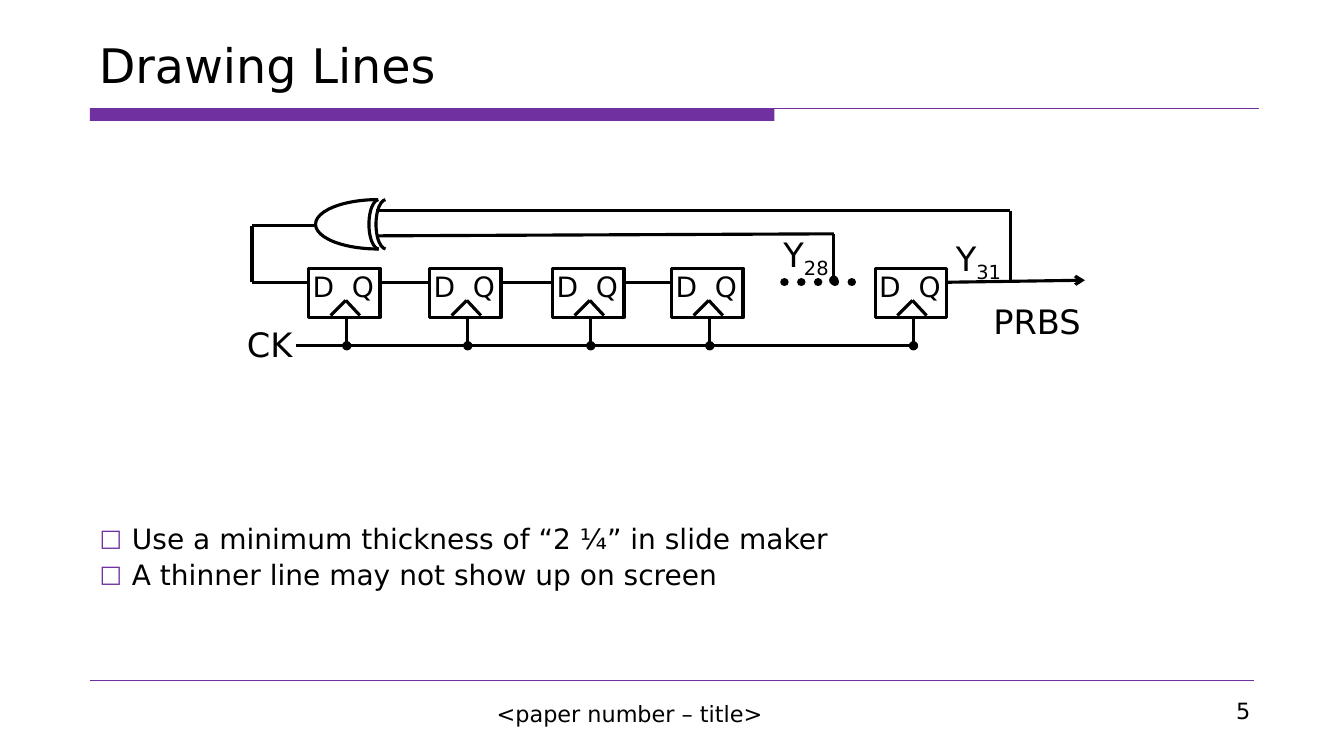
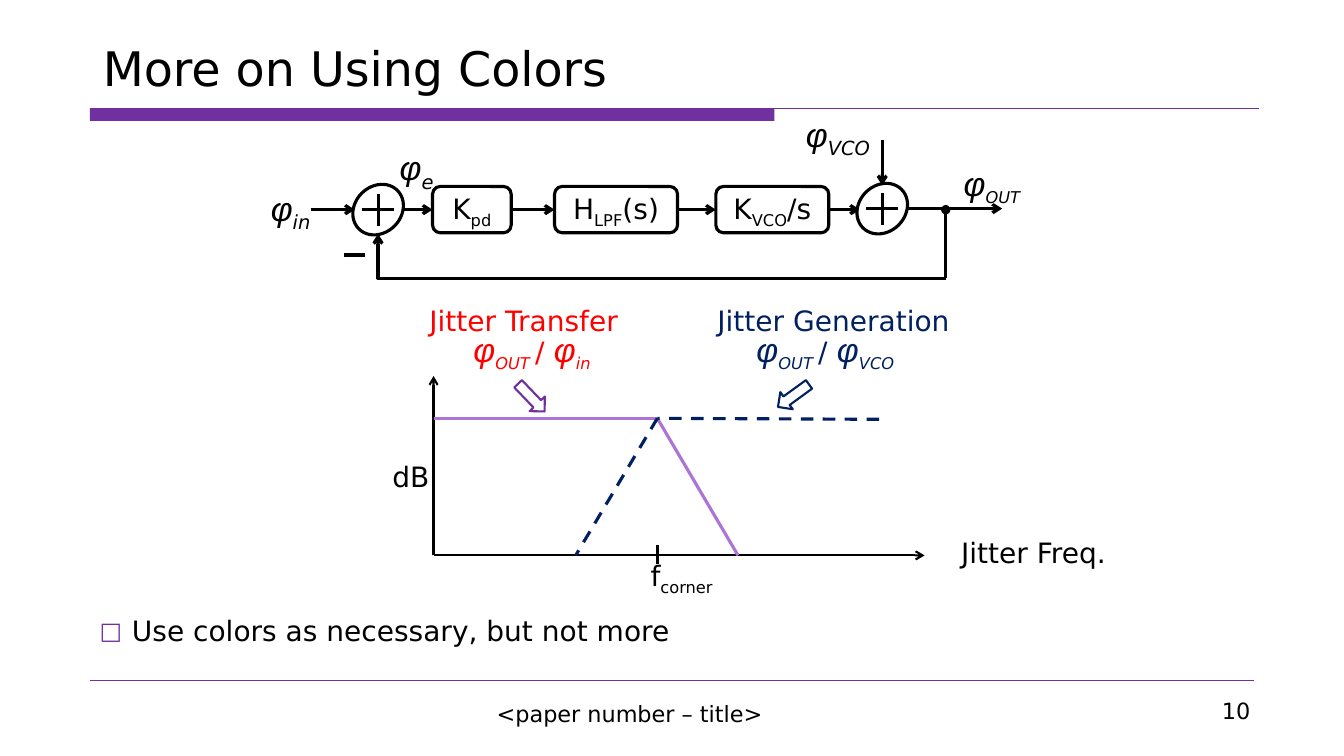
from dataclasses import dataclass
from itertools import pairwise
from typing import NamedTuple, Optional, Sequence

from lxml.etree import SubElement
from pptx import Presentation
from pptx.dml.color import RGBColor
from pptx.enum.dml import MSO_LINE
from pptx.enum.shapes import MSO_CONNECTOR, MSO_SHAPE as Preset
from pptx.enum.text import MSO_ANCHOR, MSO_AUTO_SIZE, PP_ALIGN as Align
from pptx.oxml.ns import qn
from pptx.shapes.autoshape import Shape
from pptx.shapes.connector import Connector
from pptx.slide import Slide
from pptx.text.text import TextFrame
from pptx.util import Inches, Pt


@dataclass(frozen=True)
class Theme:
    black: RGBColor = RGBColor(0, 0, 0)
    white: RGBColor = RGBColor(255, 255, 255)
    purple: RGBColor = RGBColor(0x70, 0x30, 0xA0)
    lilac: RGBColor = RGBColor(0xAB, 0x74, 0xD5)
    navy: RGBColor = RGBColor(0, 0x20, 0x60)
    red: RGBColor = RGBColor(255, 0, 0)
    font: str = "DejaVu Sans"
    symbol_font: str = "Arial"
    title: float = 34
    large: float = 24
    body: float = 20
    footer: float = 16
    stroke: float = 2.25
    thin: float = 1.5


THEME = Theme()
LEFT, TOP, RIGHT, BOTTOM = 1, 0, 1, 2
CONNECT_LEFT, CONNECT_RIGHT = 1, 3


class Point(NamedTuple):
    x: float
    y: float


class Text(NamedTuple):
    text: str
    size: float = THEME.body
    color: RGBColor = THEME.black
    font: str = THEME.font
    italic: bool = False
    subscript: bool = False


class Label(NamedTuple):
    """Right-aligned text, placed by its box's right edge and top."""
    right: float
    top: float
    width: float
    texts: Sequence[Text]


class Line(NamedTuple):
    begin: Point
    end: Point
    color: RGBColor = THEME.black
    width: float = THEME.stroke
    head: str = ""
    tail: str = ""
    dash: Optional[MSO_LINE] = None


class Block(NamedTuple):
    left: float
    width: float
    texts: Sequence[Text]


class PointerArrow(NamedTuple):
    left: float
    top: float
    angle: float
    color: RGBColor


def phi(subscript: str, size: float = THEME.large, color: RGBColor = THEME.black,
        lead: str = "") -> list[Text]:
    return [Text(lead + "φ", THEME.large, color, THEME.symbol_font, True),
            Text(subscript, size, color, italic=True, subscript=True)]


def phi_ratio(denominator: str, color: RGBColor) -> list[Text]:
    return [*phi("OUT ", THEME.body, color), Text("/", color=color),
            *phi(denominator, THEME.body, color, " ")]


def add_texts(paragraph, texts: Sequence[Text]) -> None:
    for text in texts:
        run = paragraph.add_run()
        run.text = text.text
        run.font.name = text.font
        run.font.size = Pt(text.size)
        run.font.italic = text.italic
        run.font.color.rgb = text.color
        if text.subscript:
            run.font._element.set("baseline", "-25000")


def set_frame(frame: TextFrame, insets: tuple[float, float, float, float] = (0.1, 0.05, 0.1, 0.05),
              anchor: MSO_ANCHOR = MSO_ANCHOR.TOP) -> None:
    """Insets run left, top, right, bottom."""
    frame.word_wrap = True
    frame.auto_size = MSO_AUTO_SIZE.NONE
    frame.vertical_anchor = anchor
    (frame.margin_left, frame.margin_top,
     frame.margin_right, frame.margin_bottom) = map(Inches, insets)


def add_box(slide: Slide, left: float, top: float, width: float, height: float) -> TextFrame:
    box = slide.shapes.add_textbox(Inches(left), Inches(top), Inches(width), Inches(height))
    set_frame(box.text_frame)
    return box.text_frame


def add_label(slide: Slide, label: Label) -> None:
    height = 0.44 if label.texts[0].size == THEME.large else 0.38
    frame = add_box(slide, label.right - label.width, label.top, label.width, height)
    set_frame(frame, (0.04, 0, 0.04, 0.04))
    frame.paragraphs[0].alignment = Align.RIGHT
    add_texts(frame.paragraphs[0], label.texts)


def add_bullets(slide: Slide, top: float, height: float, items: Sequence[str]) -> None:
    frame = add_box(slide, 0.89, top, 11.56, height)
    for index, item in enumerate(items):
        paragraph = frame.paragraphs[0] if index == 0 else frame.add_paragraph()
        properties = paragraph._p.get_or_add_pPr()
        properties.set("marL", str(Inches(0.32)))
        properties.set("indent", str(-Inches(0.32)))
        color = SubElement(properties, qn("a:buClr"))
        SubElement(color, qn("a:srgbClr"), val=str(THEME.purple))
        SubElement(properties, qn("a:buSzPct"), val="85000")
        SubElement(properties, qn("a:buFont"), typeface=THEME.font)
        SubElement(properties, qn("a:buChar"), char="□")
        paragraph.line_spacing = 0.9
        if index:
            paragraph.space_before = Pt(4)
        add_texts(paragraph, [Text(item)])


def add_line_ends(shape: Shape | Connector, head: str, tail: str) -> None:
    outline = shape._element.spPr.find(qn("a:ln"))
    for tag, kind in (("a:headEnd", head), ("a:tailEnd", tail)):
        if kind:
            SubElement(outline, qn(tag), type=kind)


def add_line(slide: Slide, line: Line) -> Connector:
    connector = slide.shapes.add_connector(
        MSO_CONNECTOR.STRAIGHT, *map(Inches, (*line.begin, *line.end)))
    connector.line.color.rgb = line.color
    connector.line.width = Pt(line.width)
    if line.dash:
        connector.line.dash_style = line.dash
    if line.dash == MSO_LINE.ROUND_DOT:
        connector._element.spPr.find(qn("a:ln")).set("cap", "rnd")
    add_line_ends(connector, line.head, line.tail)
    SubElement(connector._element.spPr, qn("a:effectLst"))
    return connector


def add_shape(slide: Slide, preset: Preset, left: float, top: float, width: float, height: float,
              fill: Optional[RGBColor] = THEME.white, color: RGBColor = THEME.black,
              line_width: float = THEME.stroke) -> Shape:
    shape = slide.shapes.add_shape(preset, *map(Inches, (left, top, width, height)))
    shape.shadow.inherit = False
    if fill is None:
        shape.fill.background()
    else:
        shape.fill.solid()
        shape.fill.fore_color.rgb = fill
    shape.line.color.rgb = color
    shape.line.width = Pt(line_width)
    return shape


def add_base_slide(presentation, title: str, number: int, left: float, top: float,
                   width: float) -> Slide:
    """Title-only slide with the title band and the footer."""
    slide = presentation.slides.add_slide(presentation.slide_layouts[5])
    band = add_shape(slide, Preset.RECTANGLE, 0.89, 1.08, 6.79, 0.12, THEME.purple)
    band.line.fill.background()
    add_line(slide, Line(Point(0.89, 1.08), Point(12.49, 1.08), THEME.purple, 0.75))
    add_line(slide, Line(Point(0.89, 6.75), Point(12.44, 6.75), THEME.purple, 0.25))
    for text, align, box in ((str(number), Align.RIGHT, (10.93, 6.87, 1.57, 0.37)),
                             ("<paper number – title>", Align.CENTER, (3.17, 6.9, 6.15, 0.37))):
        paragraph = add_box(slide, *box).paragraphs[0]
        paragraph.alignment = align
        add_texts(paragraph, [Text(text, THEME.footer)])
    holder = slide.shapes.title
    holder.left, holder.top, holder.width, holder.height = map(Inches, (left, top, width, 0.6))
    set_frame(holder.text_frame, anchor=MSO_ANCHOR.BOTTOM)
    paragraph = holder.text_frame.paragraphs[0]
    paragraph.alignment = Align.LEFT
    add_texts(paragraph, [Text(title, THEME.title)])
    return slide


def add_flip_flop(slide: Slide, left: float) -> None:
    shape = add_shape(slide, Preset.RECTANGLE, left, 2.66, 0.71, 0.49)
    set_frame(shape.text_frame, (0.04, 0.05, 0, 0))
    paragraph = shape.text_frame.paragraphs[0]
    tabs = SubElement(paragraph._p.get_or_add_pPr(), qn("a:tabLst"))
    SubElement(tabs, qn("a:tab"), pos=str(Inches(0.39)), algn="l")
    paragraph.alignment = Align.LEFT
    paragraph.line_spacing = 0.9
    add_texts(paragraph, [Text("D\tQ")])
    add_line(slide, Line(Point(left + 0.38, 3.43), Point(left + 0.38, 3.14), head="oval"))
    for foot in (0.22, 0.51):
        add_line(slide, Line(Point(left + foot, 3.13), Point(left + 0.37, 2.98)))


def add_xor_gate(slide: Slide) -> None:
    for left, width, start, end in ((3.13, 1.24, 162, 55.05), (3.66, 0.2, 163, 53.29),
                                    (3.73, 0.2, 163, 53.29)):
        arc = add_shape(slide, Preset.ARC, left, 1.98, width, 0.49)
        arc.adjustments[0], arc.adjustments[1] = start, end
        arc._element.spPr.find(qn("a:xfrm")).set("flipH", "1")


def add_adder(slide: Slide, center: Point) -> None:
    x, y = center
    add_shape(slide, Preset.OVAL, x - 0.23, y - 0.27, 0.46, 0.54).rotation = 45
    add_line(slide, Line(Point(x - 0.16, y), Point(x + 0.16, y)))
    add_line(slide, Line(Point(x, y + 0.16), Point(x, y - 0.16)))


def add_block(slide: Slide, block: Block) -> Shape:
    shape = add_shape(slide, Preset.ROUNDED_RECTANGLE, block.left, 1.85, block.width, 0.46)
    set_frame(shape.text_frame, (0, 0, 0, 0), MSO_ANCHOR.MIDDLE)
    paragraph = shape.text_frame.paragraphs[0]
    paragraph.alignment = Align.CENTER
    paragraph.line_spacing = 0.9
    add_texts(paragraph, block.texts)
    return shape


def build_lines_slide(presentation) -> None:
    slide = add_base_slide(presentation, "Drawing Lines", 5, 0.88, 0.37, 4.38)
    add_bullets(slide, 5.16, 0.77, ["Use a minimum thickness of “2 ¼” in slide maker",
                                    "A thinner line may not show up on screen"])
    stages = (3.06, 4.26, 5.48, 6.66)
    last_stage = 8.68
    for left in (*stages, last_stage):
        add_flip_flop(slide, left)
    for left, following in pairwise(stages):
        add_line(slide, Line(Point(left + 0.71, 2.8), Point(following, 2.8)))
    feedback = (Point(3.57, 2.24), Point(2.5, 2.24), Point(2.5, 2.8), Point(3.06, 2.8))
    for begin, end in pairwise(feedback):
        add_line(slide, Line(begin, end))
    add_xor_gate(slide)
    for line in (Line(Point(2.94, 3.43), Point(9.06, 3.43)),
                 Line(Point(10.02, 2.09), Point(3.73, 2.09)),
                 Line(Point(8.27, 2.32), Point(3.73, 2.34)),
                 Line(Point(8.27, 2.78), Point(8.27, 2.32), head="oval"),
                 Line(Point(10.02, 2.09), Point(10.02, 2.8)),
                 Line(Point(9.4, 2.8), Point(10.76, 2.78), tail="arrow"),
                 Line(Point(7.78, 2.8), Point(8.56, 2.8), width=6, dash=MSO_LINE.ROUND_DOT)):
        add_line(slide, line)
    for right, top, width, name, index in ((2.94, 3.21, 0.8, "CK", ""),
                                           (10.76, 2.99, 1.2, "PRBS", ""),
                                           (8.26, 2.32, 0.8, "Y", "28"),
                                           (9.97, 2.36, 0.8, "Y", "31")):
        texts = [Text(name, THEME.large)]
        if index:
            texts.append(Text(index, THEME.large, subscript=True))
        add_label(slide, Label(right, top, width, texts))


def add_loop_diagram(slide: Slide) -> None:
    blocks = [add_block(slide, block) for block in (
        Block(4.29, 0.78, [Text("K"), Text("pd", subscript=True)]),
        Block(5.5, 1.22, [Text("H"), Text("LPF", subscript=True), Text("(s)")]),
        Block(7.1, 1.12, [Text("K"), Text("VCO", subscript=True), Text("/s")]))]
    for source, target in pairwise(blocks):
        arrow = add_line(slide, Line(Point(5, 2.08), Point(6, 2.08), tail="arrow"))
        arrow.begin_connect(source, CONNECT_RIGHT)
        arrow.end_connect(target, CONNECT_LEFT)
    into_first = add_line(slide, Line(Point(3.97, 2.08), Point(4.29, 2.08), tail="arrow"))
    into_first.end_connect(blocks[0], CONNECT_LEFT)
    from_last = add_line(slide, Line(Point(8.22, 2.08), Point(8.53, 2.08), tail="arrow"))
    from_last.begin_connect(blocks[-1], CONNECT_RIGHT)
    for line in (Line(Point(3.08, 2.08), Point(3.52, 2.08), tail="arrow"),
                 Line(Point(8.98, 2.07), Point(9.94, 2.07), tail="arrow"),
                 Line(Point(9.38, 2.76), Point(9.38, 2.08), tail="oval"),
                 Line(Point(3.62, 2.53), Point(3.41, 2.53)),
                 Line(Point(8.75, 1.39), Point(8.75, 1.84), tail="arrow")):
        add_line(slide, line)
    builder = slide.shapes.build_freeform(Inches(3.75), Inches(2.32))
    builder.add_line_segments([(Inches(3.75), Inches(2.76)), (Inches(9.38), Inches(2.76))],
                              close=False)
    feedback = builder.convert_to_shape()
    feedback.shadow.inherit = False
    feedback.fill.background()
    feedback.line.color.rgb = THEME.black
    feedback.line.width = Pt(THEME.stroke)
    add_line_ends(feedback, "arrow", "")
    for center in (Point(3.75, 2.08), Point(8.75, 2.07)):
        add_adder(slide, center)
    for label in (Label(3.12, 1.86, 0.7, phi("in")), Label(4.34, 1.46, 0.7, phi("e")),
                  Label(10.16, 1.62, 0.9, phi("OUT", THEME.body)),
                  Label(8.67, 1.13, 1, phi("VCO"))):
        add_label(slide, label)


def add_jitter_plot(slide: Slide) -> None:
    corner = Point(6.52, 4.15)
    for line in (Line(Point(4.3, 5.51), Point(9.17, 5.51), width=THEME.thin, tail="arrow"),
                 Line(Point(4.3, 5.51), Point(4.3, 3.73), width=THEME.thin, tail="arrow"),
                 Line(Point(4.3, 4.15), corner, THEME.lilac),
                 Line(corner, Point(7.32, 5.51), THEME.lilac),
                 Line(Point(8.72, 4.16), corner, THEME.navy, dash=MSO_LINE.DASH),
                 Line(corner, Point(5.71, 5.51), THEME.navy, dash=MSO_LINE.DASH),
                 Line(Point(corner.x, 5.6), Point(corner.x, 5.41))):
        add_line(slide, line)
    for arrow in (PointerArrow(7.68, 3.82, 144, THEME.navy),
                  PointerArrow(5.08, 3.84, 46.2, THEME.purple)):
        add_shape(slide, Preset.RIGHT_ARROW, arrow.left, arrow.top, 0.38, 0.21, None,
                  arrow.color, THEME.thin).rotation = arrow.angle
    for label in (Label(6.17, 3.01, 2.06, [Text("Jitter Transfer", color=THEME.red)]),
                  Label(9.46, 3.01, 2.7, [Text("Jitter Generation", color=THEME.navy)]),
                  Label(5.9, 3.26, 1.47, phi_ratio("in", THEME.red)),
                  Label(8.91, 3.26, 1.72, phi_ratio("VCO", THEME.navy)),
                  Label(11.01, 5.31, 2.06, [Text("Jitter Freq.")]),
                  Label(4.3, 4.56, 0.6, [Text("dB")]),
                  Label(7.11, 5.54, 1.17, [Text("f"), Text("corner", subscript=True)])):
        add_label(slide, label)


def build_colors_slide(presentation) -> None:
    slide = add_base_slide(presentation, "More on Using Colors", 10, 0.92, 0.4, 5.84)
    add_loop_diagram(slide)
    add_jitter_plot(slide)
    add_bullets(slide, 6.08, 0.4, ["Use colors as necessary, but not more"])


def main() -> None:
    presentation = Presentation()
    presentation.slide_width, presentation.slide_height = Inches(13.33), Inches(7.5)
    build_lines_slide(presentation)
    build_colors_slide(presentation)
    presentation.save("out.pptx")


if __name__ == "__main__":
    main()
